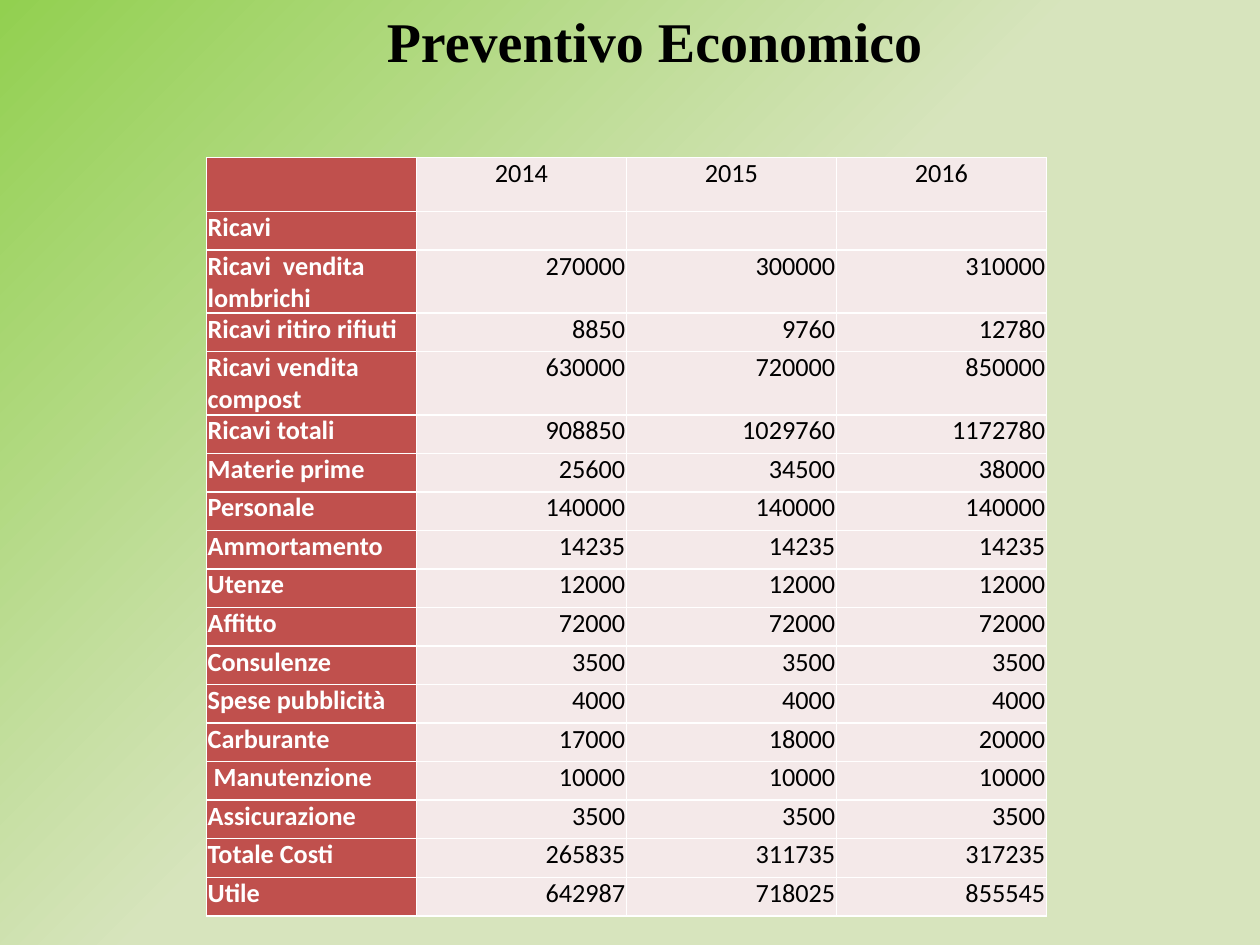
from dataclasses import dataclass

from lxml.etree import SubElement
from pptx import Presentation
from pptx.dml.color import RGBColor
from pptx.enum.text import MSO_ANCHOR, MSO_AUTO_SIZE, PP_ALIGN
from pptx.oxml.ns import qn
from pptx.slide import Slide
from pptx.table import _Cell as Cell
from pptx.util import Pt


@dataclass(frozen=True)
class Theme:
    dark: str = "000000"
    light: str = "FFFFFF"
    head: str = "C0504D"
    body: str = "F4E9E9"
    pale: str = "D7E4BD"
    green: str = "92D050"
    title_font: str = "Times New Roman"
    cell_font: str = "Calibri"
    title_size: float = 32
    cell_size: float = 15


@dataclass(frozen=True)
class Entry:
    label: str
    values: tuple[str, ...] = ("", "", "")
    height: float = 22.05
    align: PP_ALIGN = PP_ALIGN.RIGHT


THEME = Theme()
TALL = 27.5
ENTRIES = [
    Entry("", ("2014", "2015", "2016"), 30.9, PP_ALIGN.CENTER),
    Entry("Ricavi"),
    Entry("Ricavi  vendita  lombrichi", ("270000", "300000", "310000"), TALL),
    Entry("Ricavi ritiro rifiuti", ("8850", "9760", "12780")),
    Entry("Ricavi vendita compost", ("630000", "720000", "850000"), TALL),
    Entry("Ricavi totali", ("908850", "1029760", "1172780")),
    Entry("Materie prime", ("25600", "34500", "38000")),
    Entry("Personale", ("140000",) * 3),
    Entry("Ammortamento", ("14235",) * 3),
    Entry("Utenze", ("12000",) * 3),
    Entry("Affitto", ("72000",) * 3),
    Entry("Consulenze", ("3500",) * 3),
    Entry("Spese pubblicità", ("4000",) * 3),
    Entry("Carburante", ("17000", "18000", "20000")),
    Entry(" Manutenzione", ("10000",) * 3),
    Entry("Assicurazione", ("3500",) * 3),
    Entry("Totale Costi", ("265835", "311735", "317235")),
    Entry("Utile", ("642987", "718025", "855545")),
]


def paint_back(slide: Slide) -> None:
    fill = slide.background.fill
    fill.gradient()
    stops = ((0.51, THEME.pale), (1, THEME.green))
    for stop, (place, color) in zip(fill.gradient_stops, stops):
        stop.position = place
        stop.color.rgb = RGBColor.from_string(color)
    grad = next(slide.element.iter(qn("a:gradFill")))
    grad.remove(grad.find(qn("a:lin")))
    shade = SubElement(grad, qn("a:path"), path="circle")
    SubElement(shade, qn("a:fillToRect"), l="100000", t="100000")


def add_title(slide: Slide, text: str) -> None:
    title = slide.shapes.title
    title.left, title.top = Pt(213.84), Pt(0)
    title.width, title.height = Pt(331.92), Pt(46)
    frame = title.text_frame
    frame.text = text
    frame.word_wrap = False
    frame.auto_size = MSO_AUTO_SIZE.SHAPE_TO_FIT_TEXT
    frame.vertical_anchor = MSO_ANCHOR.TOP
    line = frame.paragraphs[0]
    line.alignment = PP_ALIGN.LEFT
    line.font.name = THEME.title_font
    line.font.size = Pt(THEME.title_size)
    line.font.bold = True
    line.font.color.rgb = RGBColor.from_string(THEME.dark)


def add_edges(cell: Cell) -> None:
    props = cell._tc.get_or_add_tcPr()
    for spot, side in enumerate(("lnL", "lnR", "lnT", "lnB")):
        edge = SubElement(props, qn(f"a:{side}"), w=str(Pt(1)))
        fill = SubElement(edge, qn("a:solidFill"))
        SubElement(fill, qn("a:srgbClr"), val=THEME.light)
        props.insert(spot, edge)


def fill_cell(cell: Cell, text: str, align: PP_ALIGN, head: bool) -> None:
    cell.text = text
    cell.margin_left = cell.margin_right = Pt(0.7)
    cell.margin_top = cell.margin_bottom = Pt(0)
    cell.fill.solid()
    cell.fill.fore_color.rgb = RGBColor.from_string(THEME.head if head else THEME.body)
    line = cell.text_frame.paragraphs[0]
    line.alignment = align
    line.font.name = THEME.cell_font
    line.font.size = Pt(THEME.cell_size)
    line.font.bold = head
    line.font.color.rgb = RGBColor.from_string(THEME.light if head else THEME.dark)
    add_edges(cell)


def add_budget(slide: Slide, entries: list[Entry]) -> None:
    count = len(entries[0].values) + 1
    height = sum(entry.height for entry in entries)
    frame = slide.shapes.add_table(
        len(entries), count, Pt(118), Pt(90), Pt(120 * count), Pt(height)
    )
    table = frame.table
    table.first_row = table.horz_banding = False
    for row, entry in zip(table.rows, entries):
        row.height = Pt(entry.height)
        label, *cells = row.cells
        fill_cell(label, entry.label, PP_ALIGN.LEFT, True)
        for cell, value in zip(cells, entry.values):
            fill_cell(cell, value, entry.align, False)


def main() -> None:
    deck = Presentation()
    deck.slide_width, deck.slide_height = Pt(720), Pt(540)
    slide = deck.slides.add_slide(deck.slide_layouts.get_by_name("Title Only"))
    paint_back(slide)
    add_budget(slide, ENTRIES)
    add_title(slide, "Preventivo Economico")
    deck.save("out.pptx")


if __name__ == "__main__":
    main()
